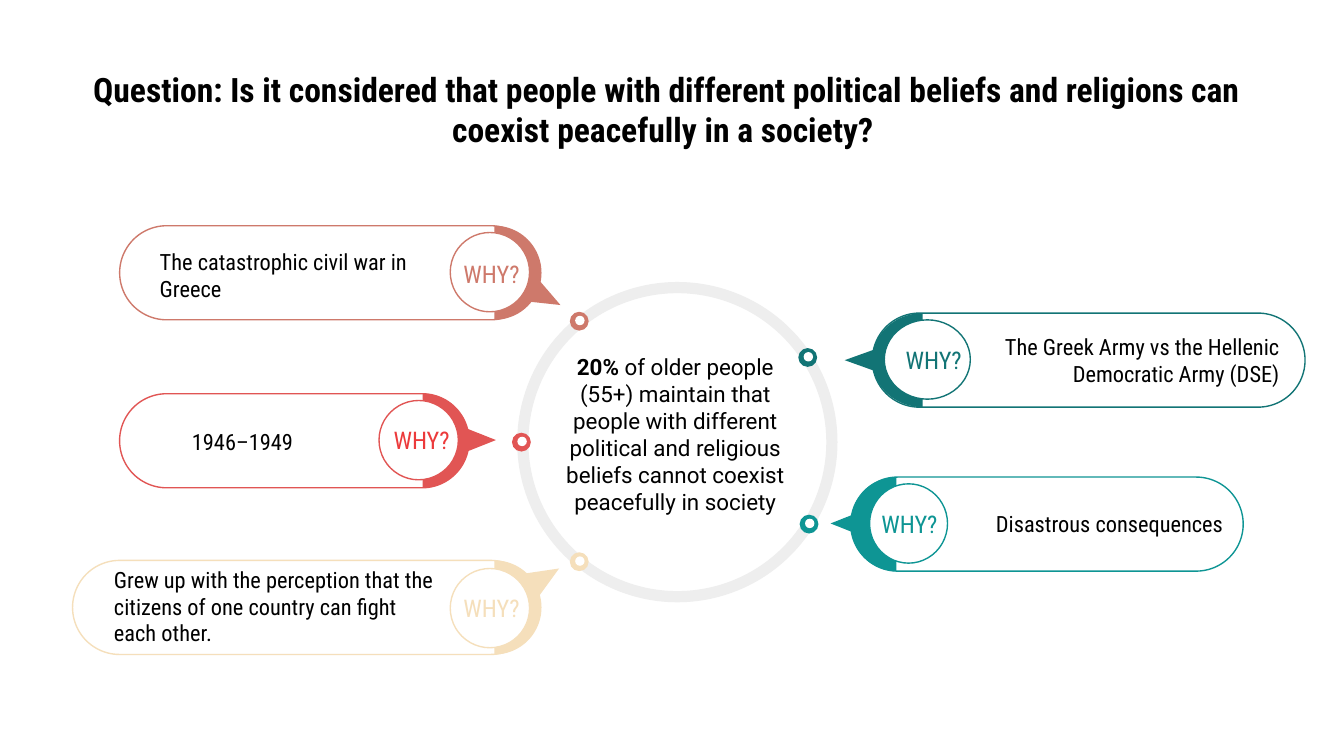
from dataclasses import dataclass
from typing import NamedTuple, Optional

from pptx import Presentation
from pptx import util as u
from pptx.dml.color import RGBColor
from pptx.enum import shapes, text

PX = 9144  # EMU in one px, 100 px to the inch

BLACK = RGBColor(0x00, 0x00, 0x00)
WHITE = RGBColor(0xFF, 0xFF, 0xFF)
GREY = RGBColor(0xEE, 0xEE, 0xEE)
CLAY = RGBColor(0xCE, 0x79, 0x6B)
RED = RGBColor(0xE1, 0x55, 0x54)
BRIGHT_RED = RGBColor(0xEC, 0x3A, 0x3B)
CREAM = RGBColor(0xF5, 0xDF, 0xBB)
PINE = RGBColor(0x12, 0x74, 0x75)
TEAL = RGBColor(0x0E, 0x95, 0x94)

SHAPE = shapes.MSO_SHAPE
ALIGN = text.PP_ALIGN
ANCHOR = text.MSO_ANCHOR
CONDENSED = "Roboto Condensed"
QUARTER, THREE_QUARTERS = 54, 162  # pie angles of 90 and 270 degrees


class Box(NamedTuple):
    x: int
    y: int
    w: int
    h: int

    def emu(self) -> list:
        return [u.Emu(v * PX) for v in self]


@dataclass
class Callout:
    body: str
    color: RGBColor
    on_left: bool
    pill: Box
    cap: Box            # full disc whose outer half is coloured
    badge: Box
    label: Box
    body_box: Box
    node: tuple         # top left of the dot on the ring
    tail: Optional[Box] = None      # sideways triangle, before rotation
    corner_tail: tuple = ()         # points of a slanted triangle
    label_color: Optional[RGBColor] = None


CALLOUTS = [
    Callout("The catastrophic civil war in Greece", CLAY, True,
            Box(89, 168, 311, 70), Box(333, 168, 70, 70), Box(335, 173, 59, 59),
            Box(335, 191, 69, 25), Box(109, 178, 218, 53), (424, 232),
            corner_tail=((399, 206), (417, 227), (389, 224))),
    Callout("Grew up with the perception that the citizens of one country "
            "can fight each other.", CREAM, True,
            Box(54, 417, 346, 70), Box(333, 417, 70, 70), Box(335, 423, 59, 59),
            Box(335, 440, 69, 25), Box(75, 410, 260, 82), (424, 411),
            corner_tail=((389, 427), (416, 423), (400, 445))),
    Callout("1946–1949", RED, True,
            Box(89, 293, 260, 70), Box(280, 293, 69, 70), Box(282, 298, 59, 59),
            Box(283, 315, 69, 25), Box(133, 310, 139, 37), (381, 322),
            tail=Box(343, 313, 23, 29), label_color=BRIGHT_RED),
    Callout("Disastrous consequences", TEAL, False,
            Box(633, 355, 292, 70), Box(633, 355, 68, 70), Box(647, 360, 58, 59),
            Box(646, 377, 69, 25), Box(699, 371, 221, 37), (595, 383),
            tail=Box(621, 375, 23, 29)),
    Callout("The Greek Army vs the Hellenic Democratic Army (DSE)", PINE, False,
            Box(649, 233, 322, 70), Box(649, 233, 75, 70), Box(658, 238, 64, 59),
            Box(664, 255, 69, 25), Box(689, 227, 273, 82), (594, 259),
            tail=Box(633, 252, 23, 32)),
]


def paint(sp, fill: Optional[RGBColor], line: Optional[RGBColor], width: float):
    sp.shadow.inherit = False
    if fill is None:
        sp.fill.background()
    else:
        sp.fill.solid()
        sp.fill.fore_color.rgb = fill
    if line is None:
        sp.line.fill.background()
    else:
        sp.line.color.rgb = line
        sp.line.width = u.Pt(width)
    return sp


def add_preset(slide, kind, box: Box, fill: Optional[RGBColor] = None,
               line: Optional[RGBColor] = None, width: float = 0.75):
    return paint(slide.shapes.add_shape(kind, *box.emu()), fill, line, width)


def add_text(slide, box: Box, content: str, size: int = 12,
             color: RGBColor = BLACK, align=ALIGN.LEFT, anchor=ANCHOR.MIDDLE,
             font: str = CONDENSED, bold: bool = False):
    """Add a one-paragraph text box and return its paragraph."""
    tf = slide.shapes.add_textbox(*box.emu()).text_frame
    tf.word_wrap = True
    tf.vertical_anchor = anchor
    tf.margin_left = tf.margin_right = u.Inches(0.1)
    tf.margin_top = tf.margin_bottom = u.Inches(0.1)
    p = tf.paragraphs[0]
    p.add_run().text = content
    p.alignment = align
    p.font.name = font
    p.font.size = u.Pt(size)
    p.font.bold = bold
    p.font.color.rgb = color
    return p


def add_tail(slide, c: Callout) -> None:
    if c.tail:
        sp = add_preset(slide, SHAPE.ISOSCELES_TRIANGLE, c.tail, c.color)
        sp.rotation = 90 if c.on_left else 270
    else:
        start, *rest = c.corner_tail
        builder = slide.shapes.build_freeform(*start, scale=PX)
        builder.add_line_segments(rest, close=True)
        paint(builder.convert_to_shape(), c.color, None, 0)


def add_callout(slide, c: Callout) -> None:
    pill = add_preset(slide, SHAPE.ROUNDED_RECTANGLE, c.pill, line=c.color)
    pill.adjustments[0] = 0.5
    cap = add_preset(slide, SHAPE.PIE, c.cap, c.color)
    angles = (THREE_QUARTERS, QUARTER) if c.on_left else (QUARTER, THREE_QUARTERS)
    cap.adjustments[0], cap.adjustments[1] = angles
    add_tail(slide, c)
    add_preset(slide, SHAPE.OVAL, c.badge, WHITE, c.color)
    add_text(slide, c.body_box, c.body,
             align=ALIGN.LEFT if c.on_left else ALIGN.RIGHT)
    add_text(slide, c.label, "WHY?", 13, c.label_color or c.color)


def add_node(slide, c: Callout) -> None:
    x, y = c.node
    add_preset(slide, SHAPE.OVAL, Box(x, y, 14, 14), c.color)
    add_preset(slide, SHAPE.OVAL, Box(x + 4, y + 3, 7, 7), WHITE)


def main() -> None:
    prs = Presentation()
    prs.slide_width, prs.slide_height = u.Inches(10), u.Inches(5.625)
    slide = prs.slides.add_slide(prs.slide_layouts[6])

    # Title
    add_text(slide, Box(47, 47, 898, 68),
             "Question: Is it considered that people with different political "
             "beliefs and religions can coexist peacefully in a society? ",
             18, align=ALIGN.CENTER, bold=True)

    # Central ring with its finding
    add_preset(slide, SHAPE.OVAL, Box(389, 214, 230, 230), line=GREY, width=6)
    p = add_text(slide, Box(410, 253, 185, 169), "20%", align=ALIGN.CENTER,
                 anchor=ANCHOR.TOP, font="Roboto")
    p.runs[0].font.bold = True
    p.add_run().text = (" of older people (55+) maintain that people with "
                        "different political and religious beliefs cannot "
                        "coexist peacefully in society")

    # Callouts and their dots on the ring
    for c in CALLOUTS:
        add_callout(slide, c)
        add_node(slide, c)

    prs.save("out.pptx")


if __name__ == "__main__":
    main()
